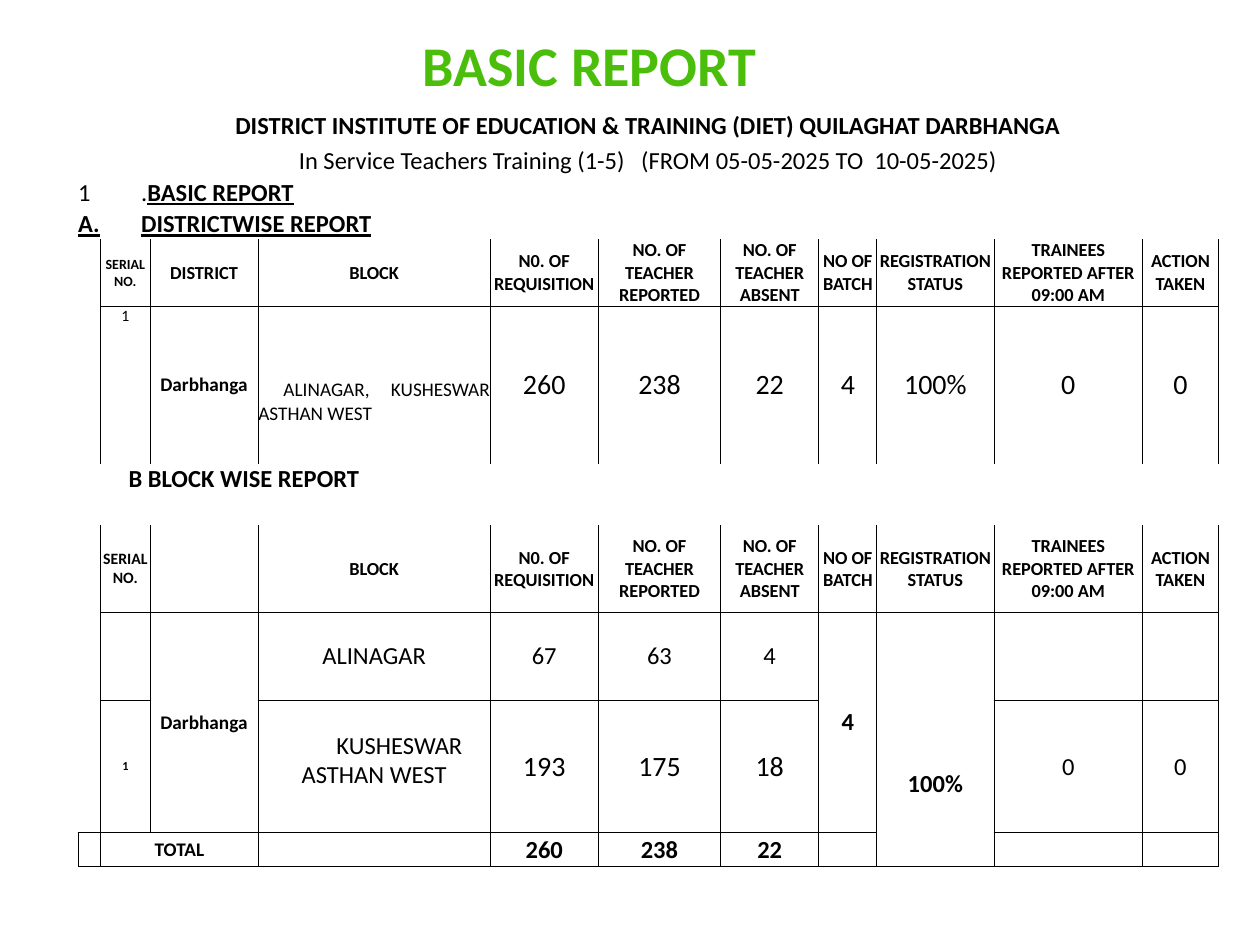
from lxml import etree
from pptx import Presentation
from pptx.dml.color import RGBColor
from pptx.enum.text import MSO_ANCHOR, PP_ALIGN
from pptx.oxml.ns import qn
from pptx.util import Inches, Pt

CENTER, LEFT, JUSTIFY = PP_ALIGN.CENTER, PP_ALIGN.LEFT, PP_ALIGN.JUSTIFY
TOP, MIDDLE, BOTTOM = MSO_ANCHOR.TOP, MSO_ANCHOR.MIDDLE, MSO_ANCHOR.BOTTOM
BLACK, WHITE, GREEN = "000000", "FFFFFF", "4ABE0A"

COLUMN_WIDTHS = [0.18, 0.39, 0.86, 1.84, 0.86, 0.97, 0.78, 0.46, 0.93, 1.18, 0.6]
ROW_HEIGHTS = [0.26, 0.28, 0.25, 0.25, 0.53, 1.25, 0.49, 0.69, 0.7, 1.05, 0.27]
BANNER_ROWS = (0, 1, 2, 3, 6)
HEADER_ROWS = (4, 7)
HEADINGS = ["BLOCK", "N0. OF REQUISITION", "NO. OF TEACHER REPORTED",
            "NO. OF TEACHER ABSENT", "NO OF BATCH", "REGISTRATION STATUS",
            "TRAINEES REPORTED AFTER 09:00 AM", "ACTION TAKEN"]
MERGES = [(row, 0, row, 10) for row in BANNER_ROWS] + [
    (8, 2, 9, 2), (8, 7, 9, 7), (9, 8, 10, 8), (10, 1, 10, 2)]


def color(value):
    return RGBColor.from_string(value)


def add_span(para, text, size=14, bold=False, underline=False, fill=BLACK):
    span = para.add_run()
    span.text = text
    font = span.font
    font.name, font.size = "Calibri", Pt(size)
    font.bold, font.underline = bold, underline
    font.color.rgb = color(fill)


def write(holder, text, align=CENTER, anchor=MIDDLE, indent=0, left=0, tab=None, **style):
    frame = holder.text_frame
    holder.vertical_anchor = anchor
    para = frame.paragraphs[0]
    para.alignment = align
    properties = para._p.get_or_add_pPr()
    properties.set("marL", str(Inches(left)))
    properties.set("indent", str(Inches(indent)))
    if tab:
        stops = etree.SubElement(properties, qn("a:tabLst"))
        etree.SubElement(stops, qn("a:tab"), pos=str(Inches(tab)), algn="l")
    add_span(para, text, **style)
    return para


def add_title(page):
    title = page.shapes.title
    title.left, title.top = Inches(0.43), Inches(0.16)
    title.width, title.height = Inches(8.5), Inches(0.7)
    frame = title.text_frame
    frame.vertical_anchor = MIDDLE
    frame.paragraphs[0].alignment = CENTER
    add_span(frame.paragraphs[0], "BASIC REPORT", size=32, bold=True, fill=GREEN)


def visible_sides(row, column):
    if row in BANNER_ROWS:
        return ""
    if column == 0 and row < 10:
        return "RB" if row == 9 else "R"
    if column == 8 and row >= 8:
        return "LRT" if row == 8 else "LRB"
    if row in HEADER_ROWS:
        return "LRB"
    return "LRT" if row == 5 else "LRTB"


def set_borders(cell, sides):
    properties = cell._tc.get_or_add_tcPr()
    for position, side in enumerate("LRTB"):
        line = etree.Element(qn(f"a:ln{side}"), w=str(Pt(0.5)))
        if side in sides:
            solid = etree.SubElement(line, qn("a:solidFill"))
            etree.SubElement(solid, qn("a:srgbClr"), val=BLACK)
        else:
            etree.SubElement(line, qn("a:noFill"))
        properties.insert(position, line)


def format_cell(cell, row, column):
    cell.margin_left = cell.margin_right = cell.margin_top = cell.margin_bottom = 0
    if column > 0 and row in (4, 7, 8):
        cell.fill.solid()
        cell.fill.fore_color.rgb = color(WHITE)
    else:
        cell.fill.background()
    set_borders(cell, visible_sides(row, column))


def add_grid(page):
    frame = page.shapes.add_table(
        len(ROW_HEIGHTS), len(COLUMN_WIDTHS), Inches(0.62), Inches(0.86),
        Inches(sum(COLUMN_WIDTHS)), Inches(sum(ROW_HEIGHTS)))
    table = frame.table
    table.first_row = table.horz_banding = False
    for column, width in zip(table.columns, COLUMN_WIDTHS):
        column.width = Inches(width)
    for row, height in zip(table.rows, ROW_HEIGHTS):
        row.height = Inches(height)
    for row in range(len(ROW_HEIGHTS)):
        for column in range(len(COLUMN_WIDTHS)):
            format_cell(table.cell(row, column), row, column)
    for top, left, bottom, right in MERGES:
        table.cell(top, left).merge(table.cell(bottom, right))
    return table


def write_row(table, row, first, texts, **style):
    for column, text in enumerate(texts, first):
        if text:
            write(table.cell(row, column), text, **style)


def write_banners(table):
    write(table.cell(0, 0), "DISTRICT INSTITUTE OF EDUCATION & TRAINING (DIET) QUILAGHAT DARBHANGA",
          anchor=BOTTOM, bold=True)
    write(table.cell(1, 0), "In Service Teachers Training (1-5)   (FROM 05-05-2025 TO  10-05-2025)",
          anchor=BOTTOM)
    para = write(table.cell(2, 0), "1\t.", align=LEFT, anchor=BOTTOM, tab=0.33)
    add_span(para, "BASIC REPORT", bold=True, underline=True)
    write(table.cell(3, 0), "A.\tDISTRICTWISE REPORT", align=LEFT, anchor=BOTTOM, tab=0.4,
          bold=True, underline=True)
    write(table.cell(6, 0), "B BLOCK WISE REPORT", align=LEFT, anchor=TOP, left=0.4, bold=True)


def write_headers(table):
    for row, size in zip(HEADER_ROWS, (8, 9)):
        write(table.cell(row, 1), "SERIAL NO.", size=size, bold=True)
        write_row(table, row, 3, HEADINGS, size=10.5, bold=True)
    write(table.cell(4, 2), "DISTRICT", size=10.5, bold=True)


def write_records(table):
    write(table.cell(5, 1), "1", anchor=TOP, size=9)
    write(table.cell(9, 1), "1", size=7, bold=True)
    for row in (5, 8):
        write(table.cell(row, 2), "Darbhanga", size=11, bold=True)
    blocks = table.cell(5, 3)
    blocks.margin_top = Inches(0.57)
    write(blocks, "ALINAGAR, KUSHESWAR ASTHAN WEST", align=JUSTIFY, anchor=TOP, indent=0.2, size=11)
    block = table.cell(9, 3)
    block.margin_top = Inches(0.24)
    write(block, "KUSHESWAR ASTHAN WEST", anchor=TOP, indent=0.4)

    write_row(table, 5, 4, ["260", "238", "22", "4", "100%", "0", "0"], size=16)
    write_row(table, 8, 3, ["ALINAGAR", "67", "63", "4"])
    write_row(table, 9, 4, ["193", "175", "18"], size=16)
    write_row(table, 9, 9, ["0", "0"])
    write(table.cell(8, 7), "4", bold=True)
    write(table.cell(9, 8), "100%", bold=True)
    write(table.cell(10, 1), "TOTAL", size=11, bold=True)
    write_row(table, 10, 4, ["260", "238", "22"], bold=True)


def shrink_empty_cells(table):
    for cell in table.iter_cells():
        if not cell.text_frame.text:
            etree.SubElement(cell.text_frame.paragraphs[0]._p, qn("a:endParaRPr"), sz="800")


def main():
    deck = Presentation()
    deck.slide_width, deck.slide_height = Inches(10), Inches(7.5)
    page = deck.slides.add_slide(deck.slide_layouts[0])
    subtitle = page.placeholders[1].element
    subtitle.getparent().remove(subtitle)
    add_title(page)
    table = add_grid(page)
    write_banners(table)
    write_headers(table)
    write_records(table)
    shrink_empty_cells(table)
    deck.save("out.pptx")


if __name__ == "__main__":
    main()
